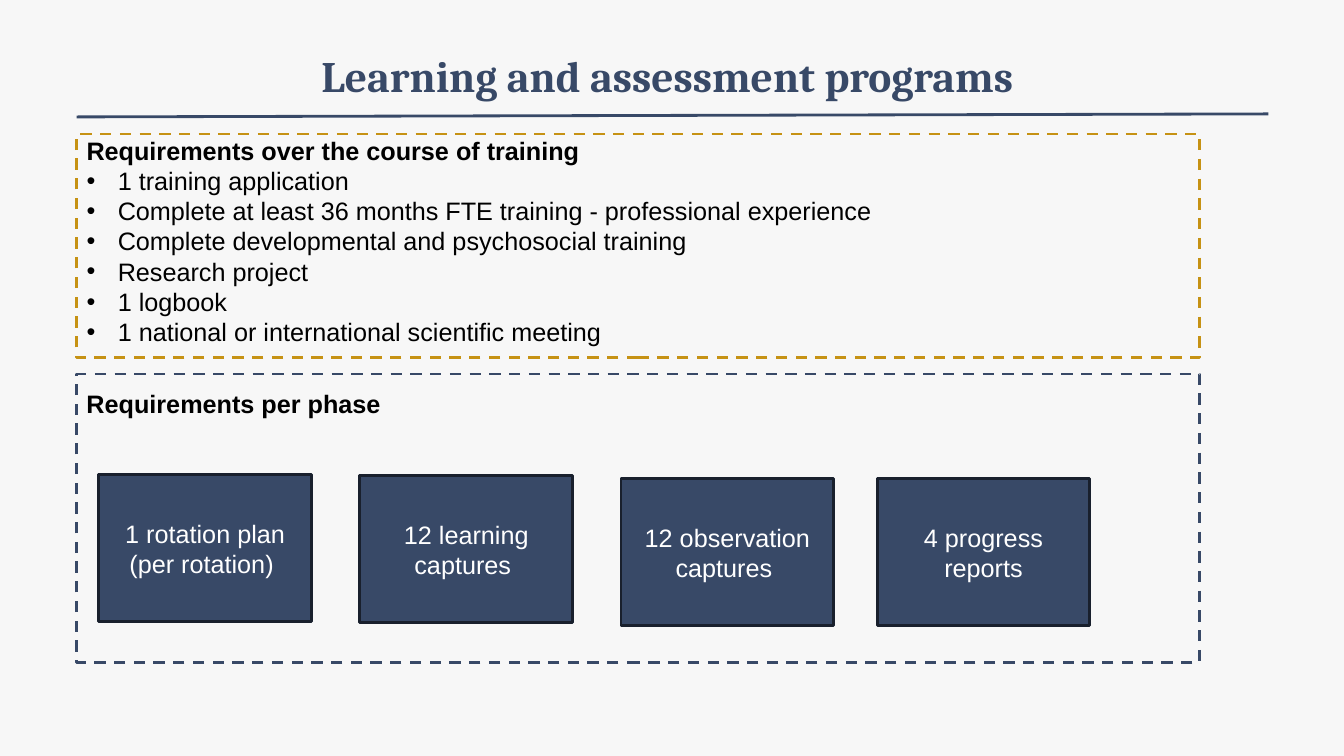
from dataclasses import dataclass
from lxml.etree import SubElement
from pptx import Presentation
from pptx.dml.color import RGBColor
from pptx.enum.dml import MSO_LINE
from pptx.enum.shapes import MSO_CONNECTOR, MSO_SHAPE
from pptx.enum.text import MSO_ANCHOR, PP_ALIGN
from pptx.oxml.ns import qn
from pptx.util import Inches, Pt


@dataclass(frozen=True)
class Theme:
    back: RGBColor = RGBColor.from_string("F7F7F7")
    navy: RGBColor = RGBColor.from_string("384967")
    gold: RGBColor = RGBColor.from_string("C69214")
    edge: RGBColor = RGBColor.from_string("19202D")
    ink: RGBColor = RGBColor.from_string("000000")
    white: RGBColor = RGBColor.from_string("FFFFFF")
    head: str = "Cambria"
    body: str = "Arial"
    large: Pt = Pt(31)
    text: Pt = Pt(18)
    rule: Pt = Pt(2)
    indent: Inches = Inches(0.31)


@dataclass(frozen=True)
class Box:
    x: float
    y: float
    w: float
    h: float

    def inner(self, x, y, w, h):
        """Inner box, given in percent of this one."""
        return Box(self.x + self.w * x / 100, self.y + self.h * y / 100,
                   self.w * w / 100, self.h * h / 100)

    def place(self):
        return [Inches(v) for v in (self.x, self.y, self.w, self.h)]


THEME = Theme()
PAGE = Box(0, 0, 13.33, 7.5)
TASKS = [
    "1 training application",
    "Complete at least 36 months FTE training - professional experience",
    "Complete developmental and psychosocial training",
    "Research project",
    "1 logbook",
    "1 national or international scientific meeting",
]
# Label, left and top in percent of the phase panel
CARDS = [
    ("1 rotation plan (per rotation) ", 1.97, 34.97),
    ("12 learning captures ", 25.22, 35.31),
    ("12 observation captures ", 48.47, 36.36),
    ("4 progress reports", 71.27, 36.36),
]


def apply(item, **form):
    for name, value in form.items():
        setattr(item, name, value)


def write(para, text, color, **form):
    run = para.add_run()
    run.text = text
    look = {"name": THEME.body, "size": THEME.text, "bold": False}
    apply(run.font, **{**look, **form})
    run.font.color.rgb = color


def add_text(slide, box, **form):
    frame = slide.shapes.add_textbox(*box.place()).text_frame
    apply(frame, word_wrap=True, **form)
    return frame


def add_rect(slide, box, line, fill=None, dash=None):
    rect = slide.shapes.add_shape(MSO_SHAPE.RECTANGLE, *box.place())
    rect.shadow.inherit = False
    if fill is None:
        rect.fill.background()
    else:
        rect.fill.solid()
        rect.fill.fore_color.rgb = fill
    rect.line.color.rgb = line
    apply(rect.line, width=THEME.rule, dash_style=dash)
    return rect


def add_bullet(para):
    props = para._p.get_or_add_pPr()
    props.set("marL", str(THEME.indent))
    props.set("indent", str(-THEME.indent))
    SubElement(props, qn("a:buFont")).set("typeface", THEME.body)
    SubElement(props, qn("a:buChar")).set("char", "•")


def add_header(slide, box):
    frame = add_text(slide, box.inner(7.61, 0, 84.69, 100),
                     vertical_anchor=MSO_ANCHOR.MIDDLE,
                     margin_left=Inches(0.07), margin_right=Inches(0.07),
                     margin_top=Inches(0.04), margin_bottom=Inches(0.04))
    title = frame.paragraphs[0]
    title.alignment = PP_ALIGN.CENTER
    write(title, "Learning and assessment programs ", THEME.navy,
          name=THEME.head, size=THEME.large, bold=True)

    # Slightly rising rule under the title
    start, end = box.inner(0, 95.6, 0, 0), box.inner(100, 92.31, 0, 0)
    rule = slide.shapes.add_connector(MSO_CONNECTOR.STRAIGHT,
                                      *start.place()[:2], *end.place()[:2])
    rule.line.color.rgb = THEME.navy
    rule.line.width = THEME.rule
    SubElement(rule._element.spPr, qn("a:effectLst"))


def add_course(slide, box):
    add_rect(slide, box, THEME.gold, dash=MSO_LINE.DASH)
    frame = add_text(slide, box.inner(0, -1.8, 88.33, 100))
    write(frame.paragraphs[0], "Requirements over the course of training",
          THEME.ink, bold=True)
    for task in TASKS:
        para = frame.add_paragraph()
        add_bullet(para)
        write(para, task, THEME.ink)


def add_phase(slide, box):
    add_rect(slide, box, THEME.navy, dash=MSO_LINE.DASH)
    frame = add_text(slide, box.inner(0, 3.15, 59.87, 13.99))
    write(frame.paragraphs[0], "Requirements per phase", THEME.ink, bold=True)

    # Cards
    for label, left, top in CARDS:
        card = add_rect(slide, box.inner(left, top, 18.94, 51.05),
                        THEME.edge, THEME.navy)
        apply(card.text_frame, word_wrap=True,
              vertical_anchor=MSO_ANCHOR.MIDDLE)
        para = card.text_frame.paragraphs[0]
        para.alignment = PP_ALIGN.CENTER
        write(para, label, THEME.white)


def main():
    deck = Presentation()
    apply(deck, slide_width=Inches(PAGE.w), slide_height=Inches(PAGE.h))
    slide = deck.slides.add_slide(deck.slide_layouts[6])
    slide.background.fill.solid()
    slide.background.fill.fore_color.rgb = THEME.back
    add_header(slide, PAGE.inner(5.7, 3.87, 88.67, 12.13))
    add_course(slide, PAGE.inner(5.7, 17.73, 83.57, 29.6))
    add_phase(slide, PAGE.inner(5.7, 49.47, 83.57, 38.13))
    deck.save("out.pptx")


if __name__ == "__main__":
    main()
